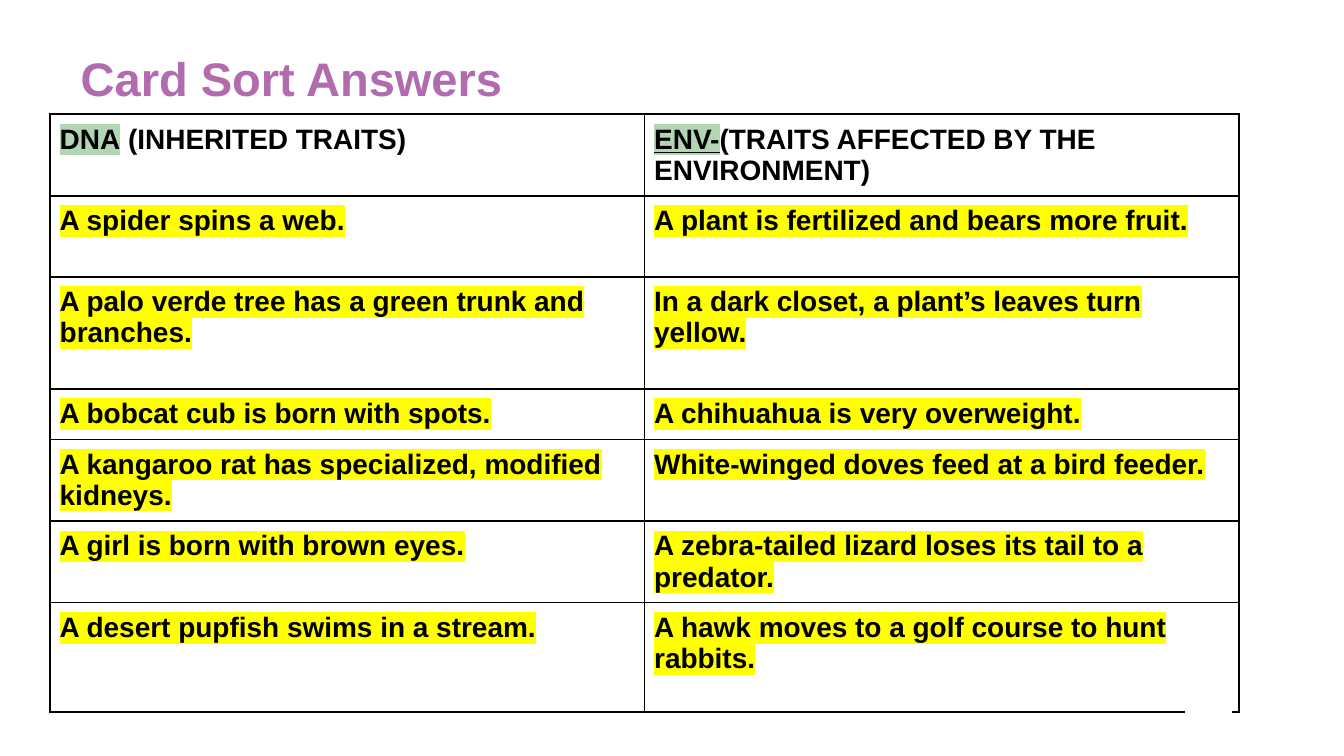
from dataclasses import dataclass

from lxml import etree
from pptx import Presentation
from pptx import util as u
from pptx.dml.color import RGBColor
from pptx.enum import shapes, text
from pptx.oxml import ns

Pt = u.Pt
FONT = "Arial"
COLORS = {
    "title": "B16BAE",
    "ink": "000000",
    "paper": "FFFFFF",
    "key": "B2D6B3",
    "answer": "FFFF00",
}


@dataclass
class Span:
    text: str
    highlight: str = ""
    underline: bool = False


@dataclass
class Row:
    height: float
    dna: list[Span]
    env: list[Span]


def answers(height: float, dna: str, env: str) -> Row:
    return Row(height, [Span(dna, "answer")], [Span(env, "answer")])


ROWS = [
    Row(
        43.4,
        [Span("DNA", "key"), Span(" (INHERITED TRAITS)")],
        [Span("ENV-", "key", True), Span("(TRAITS AFFECTED BY THE ENVIRONMENT)")],
    ),
    answers(43.4, "A spider spins a web.",
            "A plant is fertilized and bears more fruit."),
    answers(60, "A palo verde tree has a green trunk and branches.",
            "In a dark closet, a plant’s leaves turn yellow."),
    answers(27, "A bobcat cub is born with spots.",
            "A chihuahua is very overweight."),
    answers(43.4, "A kangaroo rat has specialized, modified kidneys.",
            "White-winged doves feed at a bird feeder."),
    answers(43.4, "A girl is born with brown eyes.",
            "A zebra-tailed lizard loses its tail to a predator."),
    answers(58.6, "A desert pupfish swims in a stream.",
            "A hawk moves to a golf course to hunt rabbits."),
]


def rgb(name: str) -> RGBColor:
    return RGBColor.from_string(COLORS[name])


def style_run(r, size: float, color: str) -> None:
    r.font.name = FONT
    r.font.size = Pt(size)
    r.font.bold = True
    r.font.color.rgb = rgb(color)


def highlight(r, color: str) -> None:
    mark = etree.Element(ns.qn("a:highlight"))
    etree.SubElement(mark, ns.qn("a:srgbClr"), val=COLORS[color])
    r.font._element.find(ns.qn("a:solidFill")).addnext(mark)


def add_borders(cell, width: float) -> None:
    tc_pr = cell._tc.get_or_add_tcPr()
    for i, side in enumerate("LRTB"):
        ln = etree.Element(ns.qn(f"a:ln{side}"), w=str(Pt(width)))
        fill = etree.SubElement(ln, ns.qn("a:solidFill"))
        etree.SubElement(fill, ns.qn("a:srgbClr"), val=COLORS["ink"])
        tc_pr.insert(i, ln)


def fill_cell(cell, spans: list[Span]) -> None:
    cell.margin_left = cell.margin_right = Pt(5.2)
    cell.margin_top = cell.margin_bottom = Pt(5.2)
    cell.vertical_anchor = text.MSO_ANCHOR.TOP
    cell.fill.background()
    p = cell.text_frame.paragraphs[0]
    for span in spans:
        r = p.add_run()
        r.text = span.text
        style_run(r, 15, "ink")
        r.font.underline = span.underline
        if span.highlight:
            highlight(r, span.highlight)
    add_borders(cell, 1)


def add_title(s, words: str) -> None:
    sp = s.shapes.title
    sp.left, sp.top, sp.width, sp.height = Pt(36), Pt(16.6), Pt(648), Pt(35.3)
    tf = sp.text_frame
    tf.text = words
    tf.word_wrap = True
    tf.auto_size = text.MSO_AUTO_SIZE.NONE
    tf.vertical_anchor = text.MSO_ANCHOR.TOP
    tf.margin_left = tf.margin_right = tf.margin_bottom = Pt(7.2)
    tf.margin_top = Pt(9.8)
    p = tf.paragraphs[0]
    p.alignment = text.PP_ALIGN.LEFT
    style_run(p.runs[0], 25.2, "title")


def add_answer_table(s, rows: list[Row]) -> None:
    height = sum(row.height for row in rows)
    table = s.shapes.add_table(
        len(rows), 2, Pt(26.8), Pt(61.2), Pt(637), Pt(height)).table
    table.first_row = table.horz_banding = False
    for col in table.columns:
        col.width = Pt(318.5)
    for i, row in enumerate(rows):
        table.rows[i].height = Pt(row.height)
        fill_cell(table.cell(i, 0), row.dna)
        fill_cell(table.cell(i, 1), row.env)


def add_corner_patch(s) -> None:
    sp = s.shapes.add_shape(
        shapes.MSO_SHAPE.RECTANGLE, Pt(635), Pt(371.5), Pt(24.5), Pt(18))
    sp.shadow.inherit = False
    sp.fill.solid()
    sp.fill.fore_color.rgb = rgb("paper")
    sp.line.color.rgb = rgb("paper")
    sp.line.width = Pt(0.75)


def main() -> None:
    prs = Presentation()
    prs.slide_width, prs.slide_height = Pt(720), Pt(405)
    s = prs.slides.add_slide(prs.slide_layouts[5])

    # Title
    add_title(s, "Card Sort Answers")

    # Inherited and environmental traits side by side
    add_answer_table(s, ROWS)

    # White patch over the bottom right corner
    add_corner_patch(s)

    prs.save("out.pptx")


if __name__ == "__main__":
    main()
